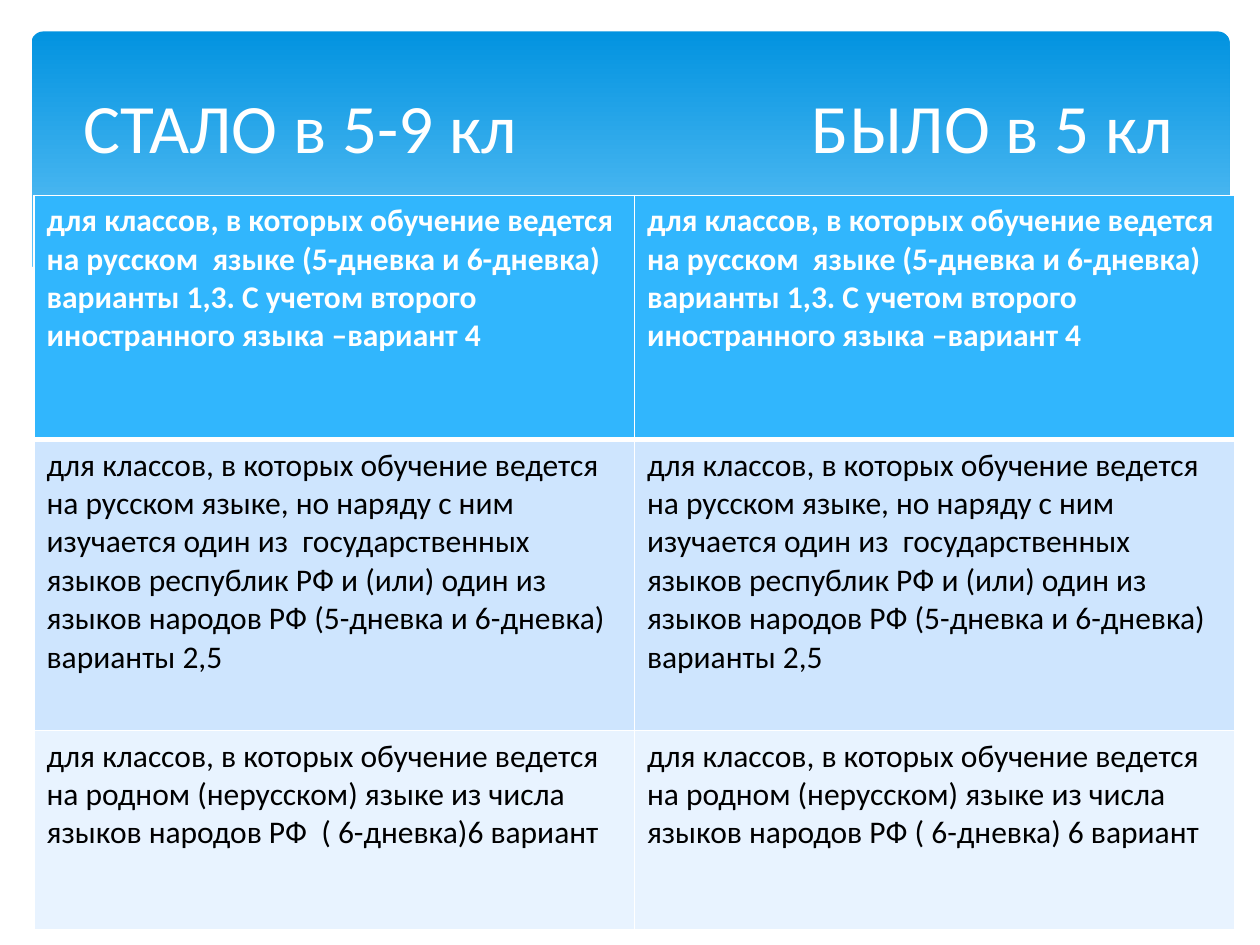
from dataclasses import dataclass

import lxml.etree
import pptx
import pptx.dml.color
import pptx.enum.shapes
import pptx.enum.text
import pptx.oxml.ns
import pptx.util

Inches = pptx.util.Inches
Pt = pptx.util.Pt
qn = pptx.oxml.ns.qn


@dataclass(frozen=True)
class Theme:
    """Colours and type sizes of the slide."""
    font: str = "Calibri"
    title_size: float = 39.6
    cell_size: float = 18
    white: str = "FFFFFF"
    black: str = "000000"
    banner_top: str = "0293E0"
    banner_bottom: str = "83D3FE"
    row_fills: tuple = ("31B6FD", "CEE5FE", "E8F3FF")


THEME = Theme()
TITLE = "СТАЛО в 5-9 кл\tБЫЛО в 5 кл"
RUSSIAN = ("для классов, в которых обучение ведется на русском  языке (5-дневка и 6-дневка) "
           "варианты 1,3. С учетом второго иностранного языка –вариант 4")
REPUBLIC = ("для классов, в которых обучение ведется на русском языке, но наряду с ним "
            "изучается один из  государственных языков республик РФ и (или) один из языков "
            "народов РФ (5-дневка и 6-дневка) варианты 2,5")
NATIVE = "для классов, в которых обучение ведется на родном (нерусском) языке из числа языков народов РФ"
ROWS = (
    (RUSSIAN, RUSSIAN),
    (REPUBLIC, REPUBLIC),
    (NATIVE + "  ( 6-дневка)6 вариант", NATIVE + " ( 6-дневка) 6 вариант"),
)
ROW_HEIGHTS = (1.94, 2.31, 1.58)
WAVE = ((0.23, 2.13), (0.52, 2.01), (0.95, 1.91), (1.46, 1.85), (1.93, 1.84), (2.5, 1.86),
        (3.16, 1.94), (3.91, 2.07), (4.75, 2.27), (5.55, 2.45), (6.26, 2.58), (6.88, 2.68),
        (7.44, 2.74), (8.09, 2.77), (8.63, 2.74), (9.1, 2.67), (9.5, 2.56), (9.77, 2.46),
        (9.77, 3.29), (0.23, 3.29))


def color(value):
    """Turn a hex string into a colour."""
    return pptx.dml.color.RGBColor.from_string(value)


def set_font(paragraph, size, value, bold=False):
    """Set the type of a whole paragraph."""
    font = paragraph.font
    font.name, font.size, font.bold = THEME.font, Pt(size), bold
    font.color.rgb = color(value)


def add_banner(page, left, top, width, height):
    """Place the rounded gradient banner in its box."""
    banner = page.shapes.add_shape(pptx.enum.shapes.MSO_SHAPE.ROUNDED_RECTANGLE,
                                   Inches(left), Inches(top), Inches(width), Inches(height))
    banner.adjustments[0] = 0.034
    banner.shadow.inherit = False
    banner.line.fill.background()
    banner.fill.gradient()
    banner.fill.gradient_angle = 270
    stops = ((0, THEME.banner_top), (0.9, THEME.banner_bottom))
    for stop, (position, value) in zip(banner.fill.gradient_stops, stops):
        stop.position = position
        stop.color.rgb = color(value)


def add_wave(page, points):
    """Cut the foot of the banner with a white wave."""
    corners = [(Inches(x), Inches(y)) for x, y in points]
    builder = page.shapes.build_freeform(*corners[0])
    builder.add_line_segments(corners[1:], close=True)
    wave = builder.convert_to_shape()
    wave.shadow.inherit = False
    wave.fill.solid()
    wave.fill.fore_color.rgb = color(THEME.white)
    wave.line.fill.background()


def add_title(page, left, top, width, height):
    """Place the two headings, the second one on a right tab."""
    box = page.shapes.add_textbox(Inches(left), Inches(top), Inches(width), Inches(height))
    frame = box.text_frame
    frame.word_wrap = True
    frame.margin_left = Inches(0.16)
    frame.vertical_anchor = pptx.enum.text.MSO_ANCHOR.MIDDLE
    paragraph = frame.paragraphs[0]
    paragraph.text = TITLE
    properties = paragraph._p.get_or_add_pPr()
    tabs = lxml.etree.SubElement(properties, qn("a:tabLst"))
    lxml.etree.SubElement(tabs, qn("a:tab"), pos=str(Inches(width - 0.35)), algn="r")
    set_font(paragraph, THEME.title_size, THEME.white)


def add_borders(cell, top, bottom):
    """Draw the white rules round a cell, widths in points."""
    properties = cell._tc.get_or_add_tcPr()
    for side, width in (("L", 1), ("R", 1), ("T", top), ("B", bottom)):
        line = lxml.etree.SubElement(properties, qn("a:ln" + side), w=str(Pt(width)))
        fill = lxml.etree.SubElement(line, qn("a:solidFill"))
        lxml.etree.SubElement(fill, qn("a:srgbClr"), val=THEME.white)


def add_comparison(page, left, top, width, height):
    """Place the comparison table in its box."""
    table = page.shapes.add_table(len(ROWS), len(ROWS[0]), Inches(left), Inches(top),
                                  Inches(width), Inches(height)).table
    for index, texts in enumerate(ROWS):
        table.rows[index].height = Inches(ROW_HEIGHTS[index])
        header = index == 0
        for column, text in enumerate(texts):
            cell = table.cell(index, column)
            cell.text = text
            set_font(cell.text_frame.paragraphs[0], THEME.cell_size,
                     THEME.white if header else THEME.black, header)
            add_borders(cell, 3 if index == 1 else 1, 3 if header else 1)
            cell.fill.solid()
            cell.fill.fore_color.rgb = color(THEME.row_fills[index])


def main():
    """Build the slide and save it."""
    deck = pptx.Presentation()
    deck.slide_width, deck.slide_height = Inches(10), Inches(7.5)
    page = deck.slides.add_slide(deck.slide_layouts[6])
    add_banner(page, 0.25, 0.25, 9.51, 2.7)
    add_wave(page, WAVE)
    add_comparison(page, 0.27, 1.55, 9.53, sum(ROW_HEIGHTS))
    add_title(page, 0.5, 0.37, 9, 1.25)
    deck.save("out.pptx")


if __name__ == "__main__":
    main()
